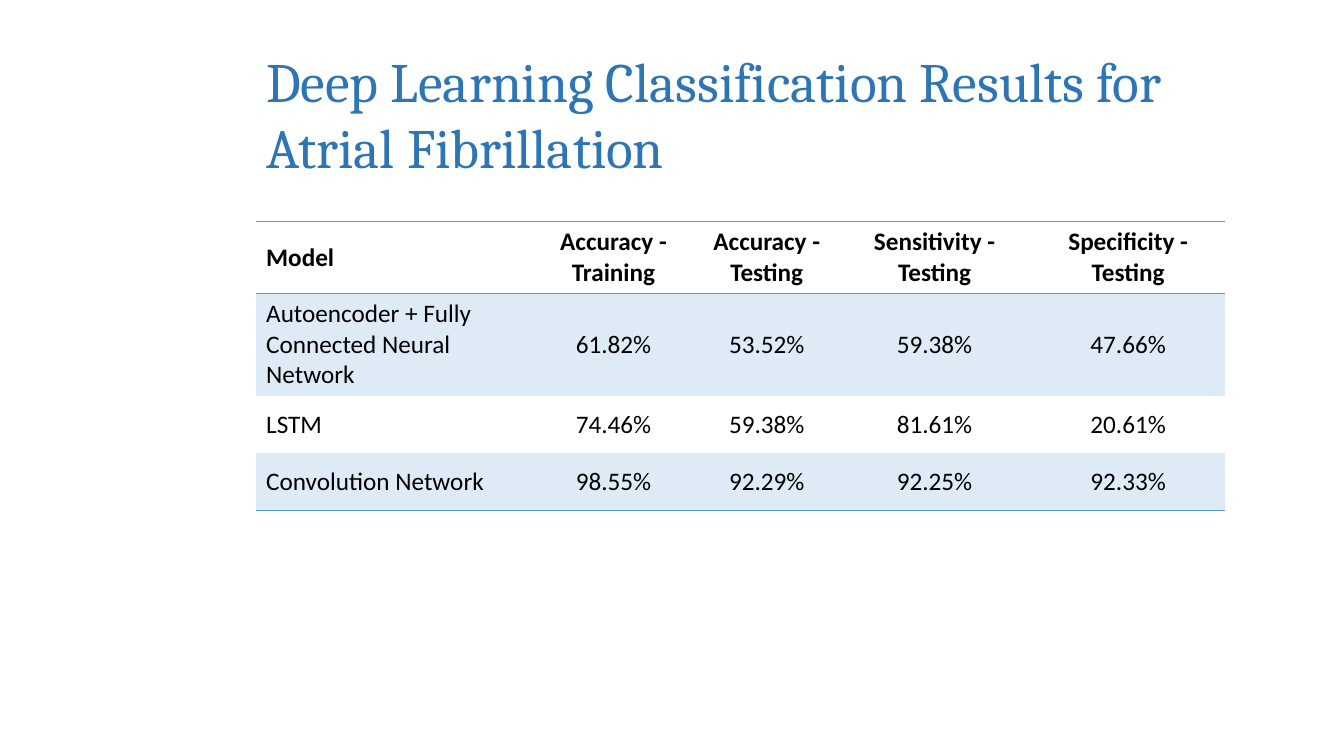
import pptx
import pptx.util
import pptx.dml.color
import pptx.enum.text
import pptx.oxml
import pptx.oxml.ns

Inches = pptx.util.Inches
Pt = pptx.util.Pt
RGBColor = pptx.dml.color.RGBColor
PP_ALIGN = pptx.enum.text.PP_ALIGN
MSO_ANCHOR = pptx.enum.text.MSO_ANCHOR

TITLE_BLUE = RGBColor(0x2E, 0x75, 0xB6)
RULE_BLUE = RGBColor(0x5B, 0x9B, 0xD5)
BAND_BLUE = RGBColor(0xDE, 0xEB, 0xF7)
BLACK = RGBColor(0, 0, 0)
PLAIN_STYLE = "{2D5ABB26-0587-4C30-8999-92F81FD0307C}"

ROWS = [
    ["Model", "Accuracy - Training", "Accuracy - Testing",
     "Sensitivity - Testing", "Specificity - Testing"],
    ["Autoencoder + Fully Connected Neural Network",
     "61.82%", "53.52%", "59.38%", "47.66%"],
    ["LSTM", "74.46%", "59.38%", "81.61%", "20.61%"],
    ["Convolution Network", "98.55%", "92.29%", "92.25%", "92.33%"],
]
COL_WIDTHS = [2.73, 1.63, 1.41, 1.92, 1.92]
ROW_HEIGHTS = [0.71, 1.01, 0.57, 0.57]
RULES = {0: ["lnT", "lnB"], 3: ["lnB"]}


def add_rule(cell, side):
    ns = pptx.oxml.ns.nsdecls("a")
    cell._tc.get_or_add_tcPr().append(pptx.oxml.parse_xml(
        f'<a:{side} {ns} w="12700"><a:solidFill><a:srgbClr val="{RULE_BLUE}"/>'
        f'</a:solidFill></a:{side}>'))


prs = pptx.Presentation()
prs.slide_width = Inches(13.33)
prs.slide_height = Inches(7.5)
s = prs.slides.add_slide(prs.slide_layouts[5])

title = s.shapes.title
title.left, title.top = Inches(2.54), Inches(0.4)
title.width, title.height = Inches(9.88), Inches(1.45)
tf = title.text_frame
tf.text = "Deep Learning Classification Results for Atrial Fibrillation"
tf.word_wrap = True
tf.auto_size = pptx.enum.text.MSO_AUTO_SIZE.NONE
tf.vertical_anchor = MSO_ANCHOR.MIDDLE
p = tf.paragraphs[0]
p.alignment = PP_ALIGN.LEFT
p.font.name = "Cambria"
p.font.size = Pt(39.6)
p.font.color.rgb = TITLE_BLUE

frame = s.shapes.add_table(len(ROWS), len(COL_WIDTHS), Inches(2.54), Inches(2.2),
                           Inches(sum(COL_WIDTHS)), Inches(sum(ROW_HEIGHTS)))
table = frame.table
table._tbl.tblPr.find(pptx.oxml.ns.qn("a:tableStyleId")).text = PLAIN_STYLE
table.horz_banding = False
for col, width in zip(table.columns, COL_WIDTHS):
    col.width = Inches(width)

for i, (values, height) in enumerate(zip(ROWS, ROW_HEIGHTS)):
    table.rows[i].height = Inches(height)
    for j, value in enumerate(values):
        cell = table.cell(i, j)
        cell.text = value
        cell.vertical_anchor = MSO_ANCHOR.MIDDLE
        for side in RULES.get(i, []):
            add_rule(cell, side)
        if i % 2:
            cell.fill.solid()
            cell.fill.fore_color.rgb = BAND_BLUE
        else:
            cell.fill.background()
        p = cell.text_frame.paragraphs[0]
        p.alignment = PP_ALIGN.CENTER if j else PP_ALIGN.LEFT
        p.font.name = "Calibri"
        p.font.size = Pt(18)
        p.font.bold = i == 0
        p.font.color.rgb = BLACK

prs.save("out.pptx")
